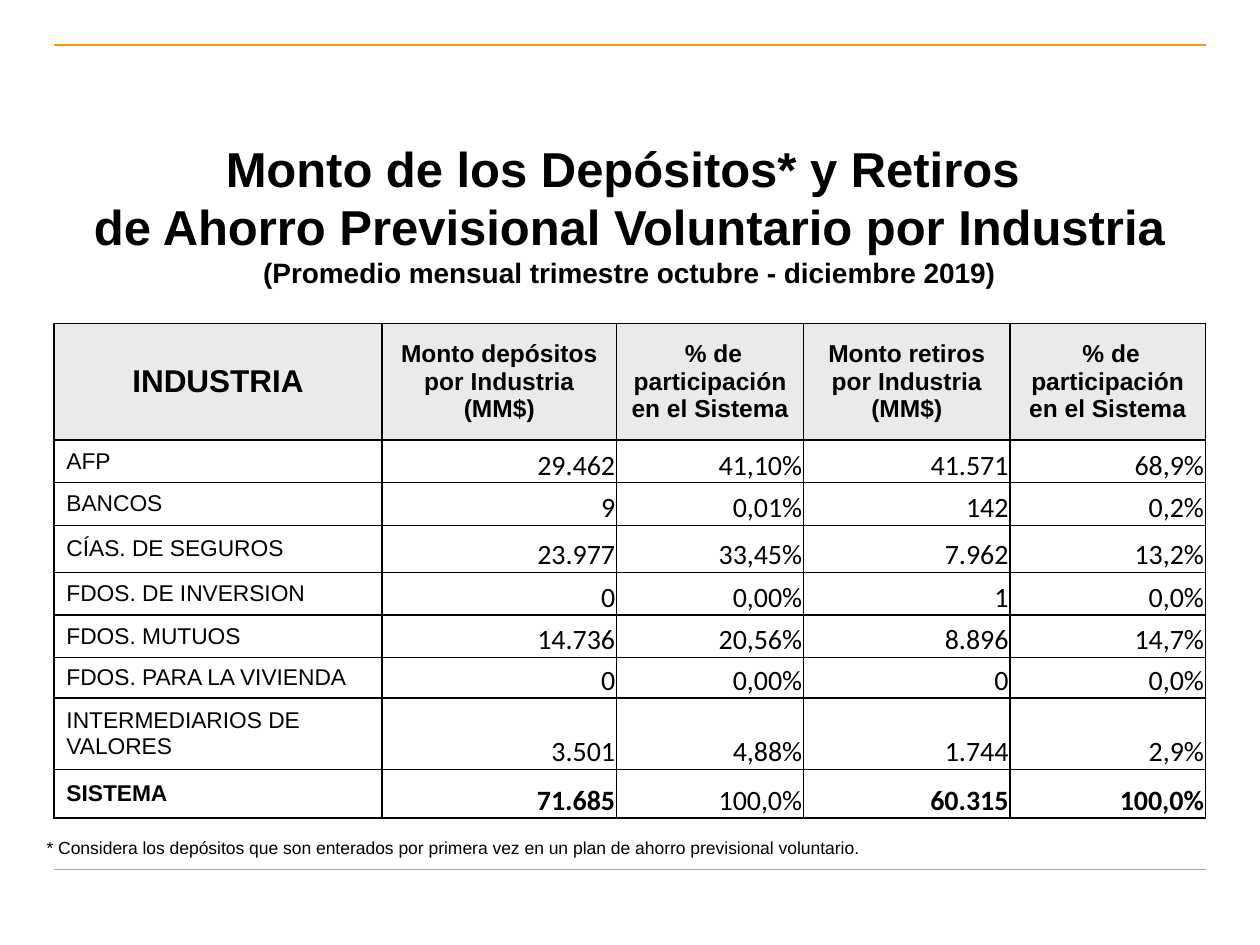
import copy

import pptx
import pptx.dml.color
import pptx.enum.shapes
import pptx.enum.text
import pptx.oxml
import pptx.oxml.ns
import pptx.util

Cm = pptx.util.Cm
Pt = pptx.util.Pt
ALIGN = pptx.enum.text.PP_ALIGN
ANCHOR = pptx.enum.text.MSO_ANCHOR


def color(hex_text):
    return pptx.dml.color.RGBColor.from_string(hex_text)


def add_run(paragraph, text, size, bold=False, font="Arial"):
    run = paragraph.add_run()
    run.text = text
    run.font.name = font
    run.font.size = Pt(size)
    run.font.bold = bold
    run.font.color.rgb = color("000000")
    return run


presentation = pptx.Presentation()
presentation.slide_width = Cm(25.4)
presentation.slide_height = Cm(19.05)
slide = presentation.slides.add_slide(presentation.slide_layouts[5])

# Orange rules at top and bottom
for y in (0.91, 17.53):
    rule = slide.shapes.add_connector(
        pptx.enum.shapes.MSO_CONNECTOR.STRAIGHT, Cm(1.09), Cm(y), Cm(24.31), Cm(y))
    rule.line.color.rgb = color("FF9900")
    rule.line.width = Pt(0.75)
    rule._element.spPr.append(pptx.oxml.parse_xml(
        f'<a:effectLst {pptx.oxml.ns.nsdecls("a")}/>'))

# Title: line breaks take the format of the run before them
title = slide.shapes.title
title.left, title.top, title.width, title.height = Cm(0.89), Cm(2.72), Cm(23.6), Cm(3.18)
title.text_frame.word_wrap = True
title.text_frame.auto_size = pptx.enum.text.MSO_AUTO_SIZE.NONE
title.text_frame.vertical_anchor = ANCHOR.MIDDLE
paragraph = title.text_frame.paragraphs[0]
paragraph.alignment = ALIGN.CENTER
for line in ("Monto de los Depósitos* y Retiros ",
             "de Ahorro Previsional Voluntario por Industria"):
    run = add_run(paragraph, line, 28, bold=True)
    paragraph.add_line_break()
    paragraph._p[-1].append(copy.deepcopy(run._r.rPr))
add_run(paragraph, "(Promedio mensual trimestre octubre - diciembre 2019)", 16, bold=True)

# Table content
share_header = " % de\nparticipación en el Sistema"
rows = [
    ("INDUSTRIA", "Monto depósitos por Industria (MM$)", share_header,
     "Monto retiros\npor Industria (MM$)", share_header),
    ("AFP", "29.462", "41,10%", "41.571", "68,9%"),
    ("BANCOS", "9", "0,01%", "142", "0,2%"),
    ("CÍAS. DE SEGUROS", "23.977", "33,45%", "7.962", "13,2%"),
    ("FDOS. DE INVERSION", "0", "0,00%", "1", "0,0%"),
    ("FDOS. MUTUOS", "14.736", "20,56%", "8.896", "14,7%"),
    ("FDOS. PARA LA VIVIENDA", "0", "0,00%", "0", "0,0%"),
    ("INTERMEDIARIOS DE VALORES", "3.501", "4,88%", "1.744", "2,9%"),
    ("SISTEMA", "71.685", "100,0%", "60.315", "100,0%"),
]
column_widths = [6.61, 4.73, 3.77, 4.16, 3.94]
row_heights = [2.35, 0.86, 0.86, 0.95, 0.86, 0.85, 0.82, 1.44, 0.98]

# Table frame
table = slide.shapes.add_table(
    len(rows), len(column_widths), Cm(1.09), Cm(6.52),
    Cm(sum(column_widths)), Cm(sum(row_heights))).table
table.first_row = False
table.horz_banding = False
for column, width in zip(table.columns, column_widths):
    column.width = Cm(width)
for row, height in zip(table.rows, row_heights):
    row.height = Cm(height)

# Table cells
for i, texts in enumerate(rows):
    for j, text in enumerate(texts):
        cell = table.cell(i, j)
        is_header, is_total = i == 0, i == len(rows) - 1
        is_number = not is_header and j > 0

        properties = cell._tc.get_or_add_tcPr()
        for side in ("lnL", "lnR", "lnT", "lnB"):
            properties.append(pptx.oxml.parse_xml(
                f'<a:{side} {pptx.oxml.ns.nsdecls("a")} w="12700"><a:solidFill>'
                f'<a:srgbClr val="000000"/></a:solidFill></a:{side}>'))
        if is_number and j % 2 == 0:
            cell.fill.background()
        else:
            cell.fill.solid()
            cell.fill.fore_color.rgb = color("EAEAEA" if is_header else "FFFFFF")

        if is_number:
            cell.margin_left = cell.margin_right = cell.margin_top = Cm(0.03)
            cell.margin_bottom = Cm(0)
            cell.vertical_anchor = ANCHOR.BOTTOM
            alignment, size, font = ALIGN.RIGHT, 16, "Calibri"
        else:
            cell.margin_left = cell.margin_right = Cm(0.25)
            cell.margin_top = cell.margin_bottom = Cm(0.13)
            cell.vertical_anchor = ANCHOR.MIDDLE
            alignment, size, font = ALIGN.LEFT, 13, "Arial"
        if is_header:
            alignment, size = ALIGN.CENTER, 18 if j == 0 else 14
        bold = is_header or (is_total and j != 2)

        for k, line in enumerate(text.split("\n")):
            frame = cell.text_frame
            paragraph = frame.add_paragraph() if k else frame.paragraphs[0]
            paragraph.alignment = alignment
            add_run(paragraph, line, size, bold, font)

# Footnote
footnote = slide.shapes.add_textbox(Cm(0.69), Cm(16.74), Cm(16.99), Cm(1.12))
footnote.text_frame.word_wrap = False
add_run(footnote.text_frame.paragraphs[0],
        "* Considera los depósitos que son enterados por primera vez "
        "en un plan de ahorro previsional voluntario.", 10)

presentation.save("out.pptx")
